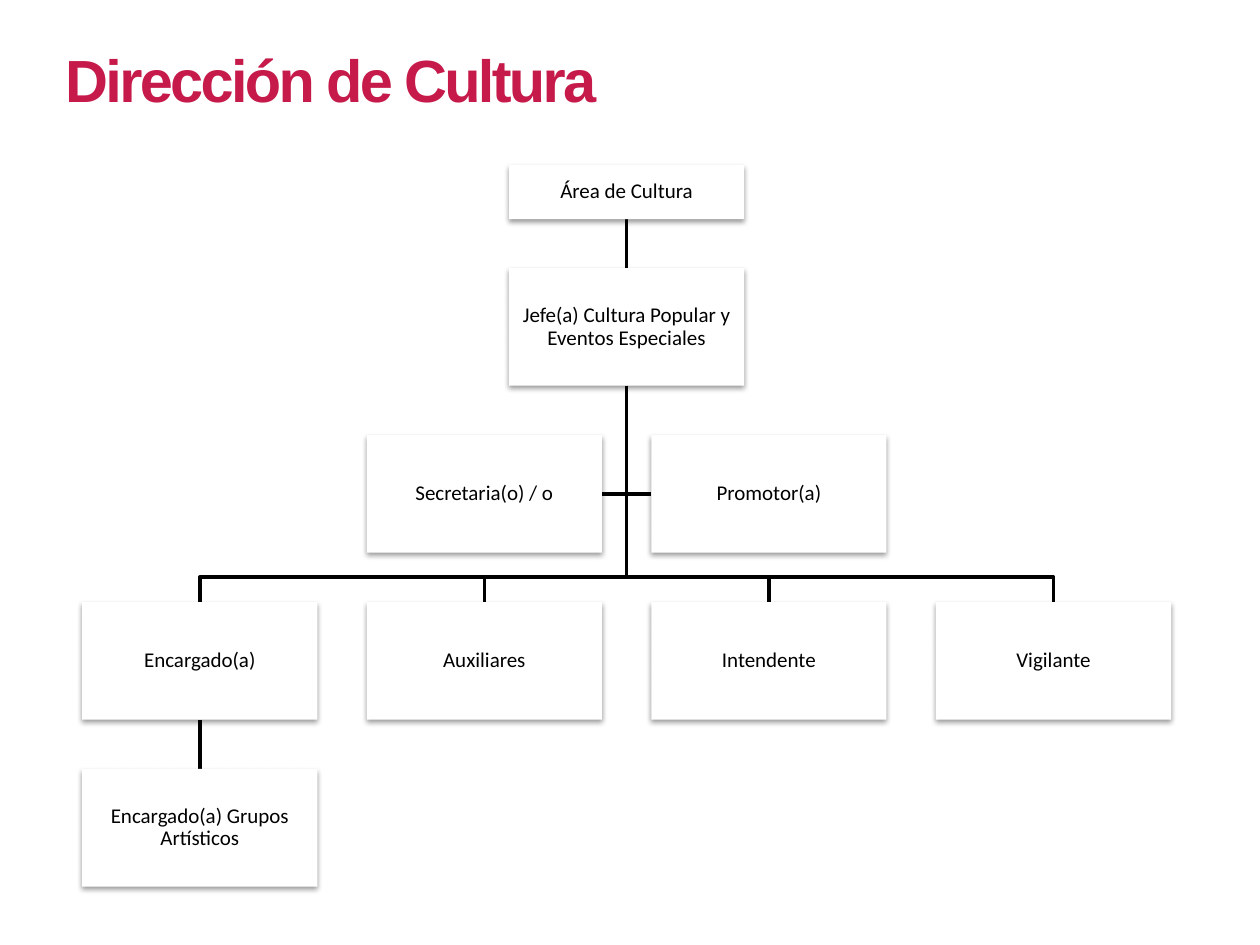
from lxml.etree import SubElement as Sub
from pptx import Presentation
from pptx.dml.color import RGBColor as Color
from pptx.enum.shapes import MSO_CONNECTOR as Link, MSO_SHAPE as Shape
from pptx.enum.text import MSO_ANCHOR as Anchor, PP_ALIGN as Align
from pptx.oxml.ns import qn
from pptx.util import Pt

COLORS = {"title": "C51A4A", "ink": "000000", "card": "FFFFFF"}

# Card grid, in points
LEFT, TOP = 47, 153.2
COLUMN_STEP, ROW_STEP = 162.6, 95.4
CARD_WIDTH, CARD_HEIGHT = 134.4, 67.2
AREA_TOP, AREA_HEIGHT = 94.2, 31
MIDDLE = 1.5  # column of the central branch

# Text, column, row
CARDS = [
    ("Jefe(a) Cultura Popular y Eventos Especiales", MIDDLE, 0),
    ("Secretaria(o) / o", 1, 1),
    ("Promotor(a)", 2, 1),
    ("Encargado(a)", 0, 2),
    ("Auxiliares", 1, 2),
    ("Intendente", 2, 2),
    ("Vigilante", 3, 2),
    ("Encargado(a) Grupos Artísticos", 0, 3),
]


def column_left(column):
    return LEFT + column * COLUMN_STEP


def column_center(column):
    return column_left(column) + CARD_WIDTH / 2


def row_top(row):
    return TOP + row * ROW_STEP


def row_bottom(row):
    return row_top(row) + CARD_HEIGHT


def write(para, text, font="Calibri", size=12, color="ink", bold=False, tracking=0):
    span = para.add_run()
    span.text = text
    span.font.name = font
    span.font.size = Pt(size)
    span.font.bold = bold
    span.font.color.rgb = Color.from_string(COLORS[color])
    if tracking:
        span.font._element.set("spc", str(round(tracking * 100)))


class Chart:
    """Organisation chart style, drawn on one page."""

    line_width = 2
    inset = 0.75

    def __init__(self, page):
        self.page = page

    def title(self, text, left, top, width, height):
        box = self.page.shapes.add_textbox(Pt(left), Pt(top), Pt(width), Pt(height))
        box.text_frame.word_wrap = True
        write(box.text_frame.paragraphs[0], text, font="Arial", size=34,
              color="title", bold=True, tracking=-1.5)

    def card(self, text, left, top, height=CARD_HEIGHT):
        card = self.page.shapes.add_shape(
            Shape.RECTANGLE, Pt(left), Pt(top), Pt(CARD_WIDTH), Pt(height))
        card.fill.solid()
        card.fill.fore_color.rgb = Color.from_string(COLORS["card"])
        card.line.fill.background()
        self.soft_shadow(card)
        frame = card.text_frame
        frame.word_wrap = True
        frame.vertical_anchor = Anchor.MIDDLE
        frame.margin_left = frame.margin_right = Pt(self.inset)
        frame.margin_top = frame.margin_bottom = Pt(self.inset)
        para = frame.paragraphs[0]
        para.alignment = Align.CENTER
        para.line_spacing = 0.9
        para.space_after = Pt(4.2)
        write(para, text)

    def soft_shadow(self, shape):
        shape.shadow.inherit = False
        effects = shape._element.spPr.find(qn("a:effectLst"))
        shadow = Sub(effects, qn("a:outerShdw"), blurRad=str(Pt(3.1)),
                     dist=str(Pt(1.6)), dir="5400000", rotWithShape="0")
        color = Sub(shadow, qn("a:srgbClr"), val=COLORS["ink"])
        Sub(color, qn("a:alpha"), val="38000")

    def stroke(self, shape):
        shape.line.color.rgb = Color.from_string(COLORS["ink"])
        shape.line.width = Pt(self.line_width)

    def straight(self, x, top, bottom):
        line = self.page.shapes.add_connector(
            Link.STRAIGHT, Pt(x), Pt(top), Pt(x), Pt(bottom))
        self.stroke(line)
        Sub(line._element.spPr, qn("a:effectLst"))

    def elbow(self, *points):
        start, *rest = [(Pt(x), Pt(y)) for x, y in points]
        builder = self.page.shapes.build_freeform(*start)
        builder.add_line_segments(rest, close=False)
        line = builder.convert_to_shape()
        line.fill.background()
        line.shadow.inherit = False
        self.stroke(line)


def main():
    deck = Presentation()
    deck.slide_width, deck.slide_height = Pt(720), Pt(540)
    chart = Chart(deck.slides.add_slide(deck.slide_layouts[6]))

    chart.title("Dirección de Cultura", 30.2, 20.9, 490.3, 49.7)

    # Lines from the head to the assistants
    trunk = column_center(MIDDLE)
    start = (trunk, row_bottom(0))
    side = row_top(1) + CARD_HEIGHT / 2
    for edge in (column_left(1) + CARD_WIDTH, column_left(2)):
        chart.elbow(start, (trunk, side), (edge, side))

    # Lines from the head to the four posts
    bus = (row_bottom(1) + row_top(2)) / 2
    for column in range(4):
        x = column_center(column)
        chart.elbow(start, (trunk, bus), (x, bus), (x, row_top(2)))

    # Straight lines
    chart.straight(trunk, AREA_TOP + AREA_HEIGHT, row_top(0))
    chart.straight(column_center(0), row_bottom(2), row_top(3))

    # Cards
    chart.card("Área de Cultura", column_left(MIDDLE), AREA_TOP, AREA_HEIGHT)
    for text, column, row in CARDS:
        chart.card(text, column_left(column), row_top(row))

    deck.save("out.pptx")


if __name__ == "__main__":
    main()
